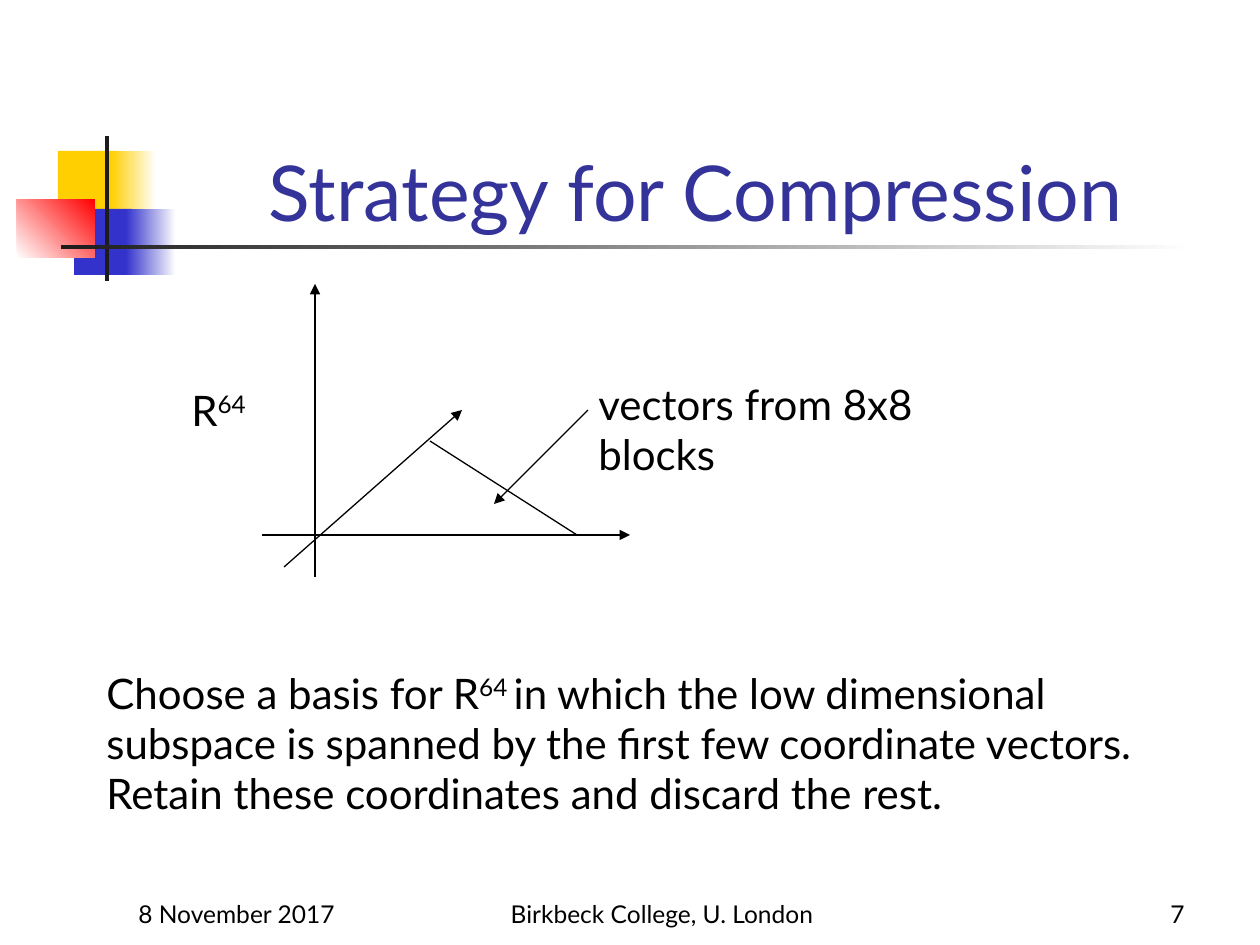
from lxml.etree import SubElement
from pptx import Presentation
from pptx.dml.color import RGBColor
from pptx.enum.shapes import MSO_CONNECTOR as Connector, MSO_SHAPE as Shape
from pptx.enum.text import MSO_ANCHOR as Anchor, PP_ALIGN as Align
from pptx.oxml.ns import qn
from pptx.util import Pt

PX = 914400 / 126
FONT = "Lato"
BLACK, WHITE, TITLE_BLUE = "000000", "FFFFFF", "333399"

TITLE = ("Strategy for Compression", (159, 86, 1074, 157))

# box, colours (two make a gradient), gradient angle
DECORATIONS = [
    ((58, 151, 60, 66), ["FFCF01"], 0),
    ((111, 151, 45, 66), ["FFCF01", WHITE], 0),
    ((74, 209, 58, 66), ["3333CC"], 0),
    ((126, 209, 50, 66), ["3333CC", WHITE], 0),
    ((17, 199, 78, 59), [WHITE, "FF0000"], 45),
    ((105, 136, 4, 145), ["1C1C1C"], 0),
    ((61, 245, 1134, 4), ["1C1C1C", WHITE], 0),
]

# start, end, has an arrowhead
LINES = [
    ((315, 577), (315, 284), True),
    ((262, 535), (630, 535), True),
    ((284, 567), (462, 410), True),
    ((430, 441), (577, 535), False),
    ((588, 410), (494, 504), True),
]

# paragraphs are lists of (text, is superscript)
LABELS = [
    ((94, 661, 1067, 164), [
        [("Choose a basis for R", False), ("64 ", True),
         ("in which the low dimensional", False)],
        [("subspace is spanned by the first few coordinate vectors.", False)],
        [("Retain these coordinates and discard the rest.", False)],
    ]),
    ((179, 378, 82, 63), [[("R", False), ("64", True)]]),
    ((586, 372, 390, 113), [[("vectors from 8x8 blocks", False)]]),
]

FOOTERS = [
    ("8 November 2017", (126, 872, 262, 63), Align.LEFT),
    ("Birkbeck College, U. London", (462, 872, 400, 63), Align.CENTER),
    ("7", (935, 872, 262, 63), Align.RIGHT),
]


def px(*lengths):
    return [round(length * PX) for length in lengths]


def rgb(color):
    return RGBColor.from_string(color)


def style(run, size, color=BLACK):
    run.font.name = FONT
    run.font.size = Pt(size)
    run.font.color.rgb = rgb(color)


def set_title(slide):
    text, box = TITLE
    title = slide.shapes.title
    title.left, title.top, title.width, title.height = px(*box)
    frame = title.text_frame
    frame.text = text
    frame.vertical_anchor = Anchor.BOTTOM
    frame.paragraphs[0].alignment = Align.CENTER
    style(frame.paragraphs[0].runs[0], 44, TITLE_BLUE)


def add_decoration(slide, box, colors, angle):
    shape = slide.shapes.add_shape(Shape.RECTANGLE, *px(*box))
    shape.shadow.inherit = False
    shape.line.fill.background()
    if len(colors) == 1:
        shape.fill.solid()
        shape.fill.fore_color.rgb = rgb(colors[0])
        return
    shape.fill.gradient()
    shape.fill.gradient_angle = angle
    for position, (stop, color) in enumerate(zip(shape.fill.gradient_stops, colors)):
        stop.position = position
        stop.color.rgb = rgb(color)


def add_line(slide, start, end, arrow):
    line = slide.shapes.add_connector(Connector.STRAIGHT, *px(*start, *end))
    line.line.color.rgb = rgb(BLACK)
    line.line.width = Pt(0.75)
    if arrow:
        SubElement(line.line._get_or_add_ln(), qn("a:tailEnd"), type="triangle")
    SubElement(line._element.spPr, qn("a:effectLst"))


def add_text_frame(slide, box):
    frame = slide.shapes.add_textbox(*px(*box)).text_frame
    frame.word_wrap = True
    return frame


def add_label(slide, box, paragraphs):
    frame = add_text_frame(slide, box)
    for index, parts in enumerate(paragraphs):
        paragraph = frame.add_paragraph() if index else frame.paragraphs[0]
        for text, superscript in parts:
            run = paragraph.add_run()
            run.text = text
            style(run, 24)
            if superscript:
                run._r.get_or_add_rPr().set("baseline", "30000")


def add_footer(slide, text, box, alignment):
    frame = add_text_frame(slide, box)
    frame.vertical_anchor = Anchor.BOTTOM
    frame.text = text
    frame.paragraphs[0].alignment = alignment
    style(frame.paragraphs[0].runs[0], 14)


def main():
    presentation = Presentation()
    presentation.slide_width, presentation.slide_height = px(1260, 945)
    slide = presentation.slides.add_slide(presentation.slide_layouts[5])
    set_title(slide)
    for decoration in DECORATIONS:
        add_decoration(slide, *decoration)
    for footer in FOOTERS:
        add_footer(slide, *footer)
    for line in LINES:
        add_line(slide, *line)
    for label in LABELS:
        add_label(slide, *label)
    presentation.save("out.pptx")


if __name__ == "__main__":
    main()
